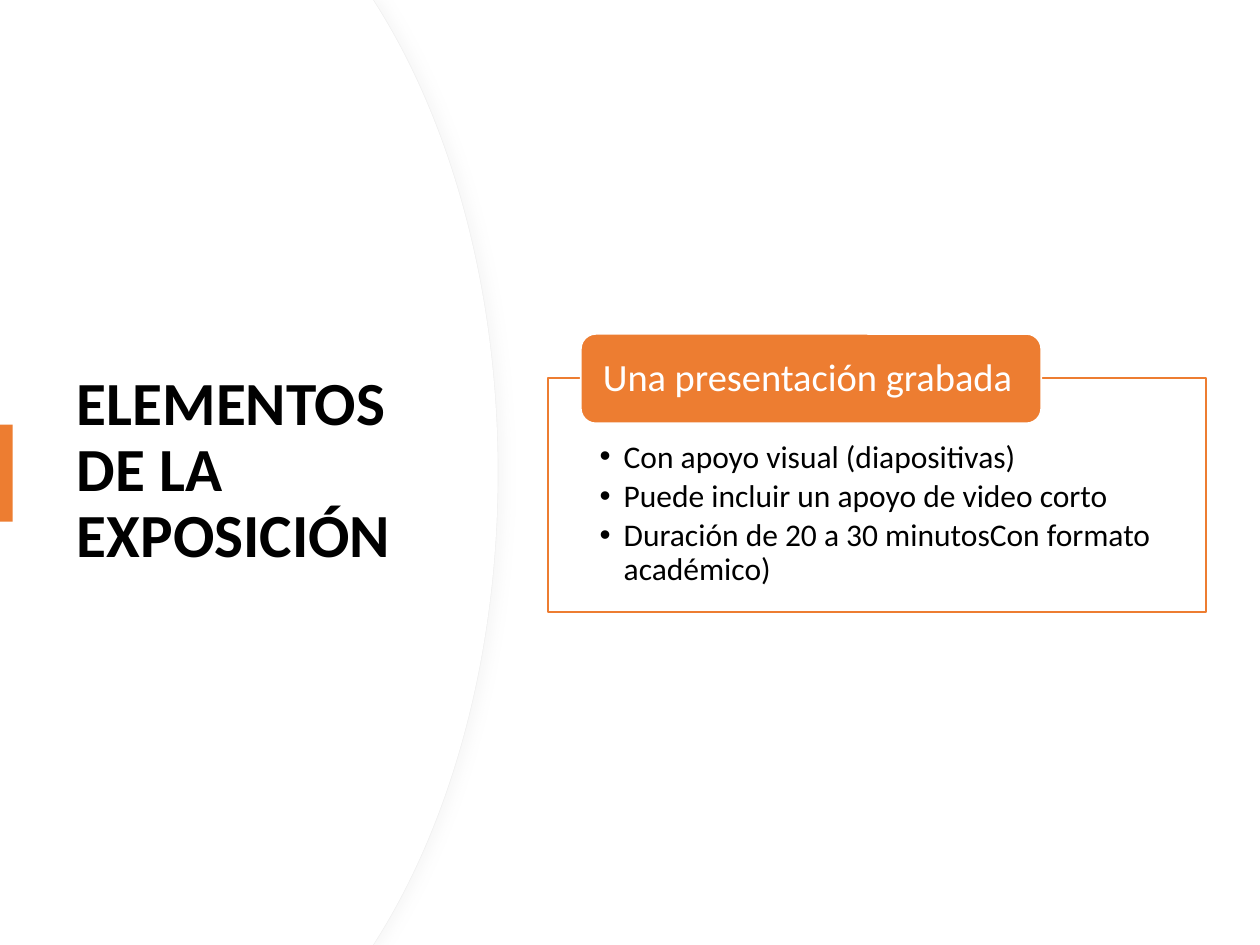
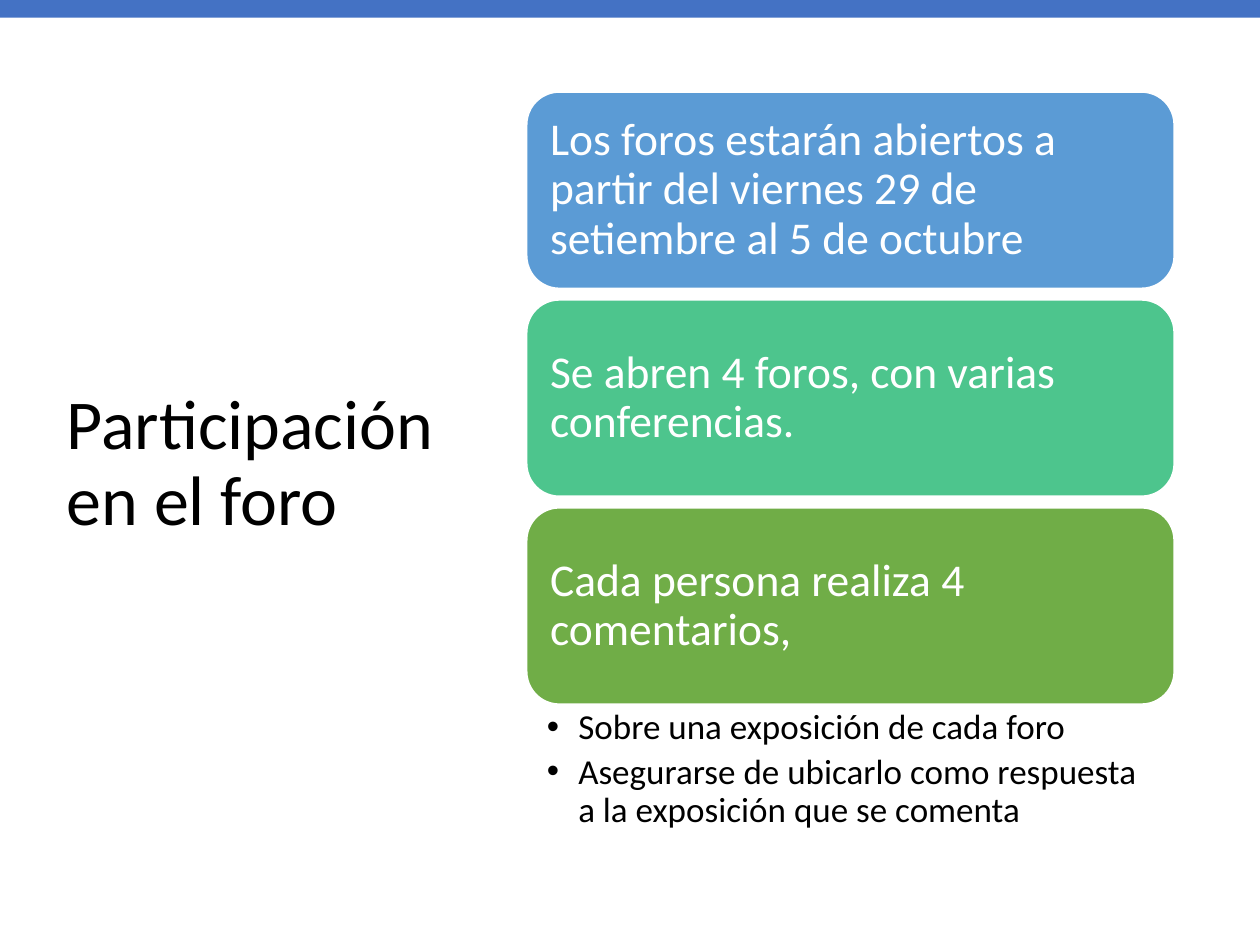
from dataclasses import dataclass

from lxml import etree
from pptx import Presentation
from pptx.dml.color import RGBColor
from pptx.enum import shapes, text
from pptx.oxml import ns
from pptx.util import Inches, Pt

RECT = shapes.MSO_SHAPE.RECTANGLE
ROUND = shapes.MSO_SHAPE.ROUNDED_RECTANGLE
TOP, MIDDLE = text.MSO_ANCHOR.TOP, text.MSO_ANCHOR.MIDDLE


@dataclass(frozen=True)
class Theme:
    font: str = "Calibri"
    black: str = "000000"
    white: str = "FFFFFF"
    edge: str = "EFEFEF"
    shade: str = "D9D9D9"
    orange: str = "ED7D31"
    blue: str = "4472C4"
    cards: tuple = ("5B9BD5", "4DC58D", "70AD47")
    strong: int = 35    # bold title
    title: int = 40
    head: int = 22
    card: int = 26
    item: int = 18
    note: int = 20


T = Theme()


def rgb(code):
    return RGBColor.from_string(code)


def paint(shape, fill, line=None, width=1):
    shape.shadow.inherit = False
    shape.fill.solid()
    shape.fill.fore_color.rgb = rgb(fill)
    if line:
        shape.line.color.rgb = rgb(line)
        shape.line.width = Pt(width)
    else:
        shape.line.fill.background()


def block(slide, kind, box, fill, line=None):
    shape = slide.shapes.add_shape(kind, *map(Inches, box))
    paint(shape, fill, line)
    return shape


def write(shape, lines, size, color, pads, anchor=MIDDLE, bold=False, after=0):
    frame = shape.text_frame
    frame.text = "\n".join(lines)
    frame.word_wrap = True
    frame.auto_size = text.MSO_AUTO_SIZE.NONE
    frame.vertical_anchor = anchor
    (frame.margin_left, frame.margin_top,
     frame.margin_right, frame.margin_bottom) = map(Inches, pads)
    for para in frame.paragraphs:
        para.alignment = text.PP_ALIGN.LEFT
        para.line_spacing = 0.9
        para.space_before = Pt(0)
        para.space_after = Pt(after)
        for run in para.runs:
            font = run.font
            font.name, font.size, font.bold = T.font, Pt(size), bold
            font.color.rgb = rgb(color)


def bullet(shape, indent):
    for para in shape.text_frame.paragraphs:
        props = para._p.get_or_add_pPr()
        props.set("marL", str(Inches(indent)))
        props.set("indent", str(-Inches(indent)))
        etree.SubElement(props, ns.qn("a:buFont")).set("typeface", "Arial")
        etree.SubElement(props, ns.qn("a:buChar")).set("char", "•")


def title(slide, box, words, size, bold=False):
    shape = slide.shapes.title
    shape.left, shape.top, shape.width, shape.height = map(Inches, box)
    write(shape, [words], size, T.black, (0.1, 0.05, 0.1, 0.05), bold=bold)


def cast(shape):
    """Soft shadow to the right of a shape."""
    effects = shape._element.spPr.find(ns.qn("a:effectLst"))
    outer = etree.SubElement(effects, ns.qn("a:outerShdw"), blurRad=str(Pt(7)),
                             dist=str(Pt(3)), dir="0", algn="l", rotWithShape="0")
    tint = etree.SubElement(outer, ns.qn("a:srgbClr"), val=T.shade)
    etree.SubElement(tint, ns.qn("a:alpha"), val="20000")


def bend(shape, starts):
    """Join three line ends from each start into one cubic curve."""
    lines = list(shape._element.spPr.iter(ns.qn("a:lnTo")))
    for start in starts:
        first, *rest = lines[start:start + 3]
        first.tag = ns.qn("a:cubicBezTo")
        for line in rest:
            first.append(line[0])
            line.getparent().remove(line)


def panel(slide):
    """White field whose right edge bulges, mirrored about its middle."""
    upper = [(2.96, 0), (3.01, 0.08), (3.59, 1.02), (3.95, 2.32)]
    lower = [(x, 7.5 - y) for x, y in reversed(upper)]
    points = [*upper, (3.95, 3.75), *lower, (0, 7.5)]
    for line in (T.edge, None):
        pen = slide.shapes.build_freeform(0, 0, scale=Inches(0.01))
        pen.add_line_segments([(x * 100, y * 100) for x, y in points])
        pen.add_line_segments([], close=True)
        shape = pen.convert_to_shape()
        bend(shape, (2, 5))
        paint(shape, T.white, line, 0.75)
        if line:
            cast(shape)


def group(slide, box, head, items):
    """Framed list with a heading tab over its top edge."""
    left, top, width, height = box
    frame = block(slide, RECT, box, T.white, T.orange)
    write(frame, items, T.item, T.black, (0.41, 0.5, 0.41, 0.14), TOP, after=3)
    bullet(frame, 0.19)
    tab = block(slide, ROUND, (left + 0.26, top - 0.35, width * 0.7, 0.71),
                T.orange, T.white)
    write(tab, [head], T.head, T.white, (0.14, 0, 0.14, 0))


def stack(slide, box, cards, notes):
    """Equal cards one below the other, then a bulleted note."""
    left, top, width, height = box
    tall, gap, under = 1.56, 0.09, 1.06
    step = tall + gap
    for i, (words, fill) in enumerate(zip(cards, T.cards)):
        card = block(slide, ROUND, (left, top + i * step, width, tall),
                     fill, T.white)
        write(card, [words], T.card, T.white, (0.11,) * 4)
    note = slide.shapes.add_textbox(
        *map(Inches, (left, top + height - under, width, under)))
    write(note, notes, T.note, T.black, (0.16, 0.04, 0.2, 0.04), TOP, after=4)
    bullet(note, 0.25)


def talk(slide):
    panel(slide)
    # Bring the title above the panel
    slide.shapes._spTree.append(slide.shapes.title._element)
    title(slide, (0.51, 1.27, 2.96, 4.95), "ELEMENTOS DE LA EXPOSICIÓN",
          T.strong, True)
    block(slide, RECT, (0, 3.37, 0.1, 0.77), T.orange)
    group(slide, (4.35, 3, 5.22, 1.86), "Una presentación grabada", [
        "Con apoyo visual (diapositivas)",
        "Puede incluir un apoyo de video corto",
        "Duración de 20 a 30 minutosCon formato académico)",
    ])


def forum(slide):
    title(slide, (0.43, 0.68, 3.12, 6.02), "Participación en el foro", T.title)
    block(slide, RECT, (0, 0, 10, 0.14), T.blue)
    stack(slide, (4.18, 0.73, 5.14, 5.92), [
        "Los foros estarán abiertos a partir del viernes 29 de setiembre "
        "al 5 de octubre",
        "Se abren 4 foros, con varias conferencias.",
        "Cada persona realiza 4 comentarios,",
    ], [
        "Sobre una exposición de cada foro",
        "Asegurarse de ubicarlo como respuesta a la exposición que se comenta",
    ])


def main():
    deck = Presentation()
    deck.slide_width, deck.slide_height = Inches(10), Inches(7.5)
    for build in (talk, forum):
        build(deck.slides.add_slide(deck.slide_layouts[5]))
    deck.save("out.pptx")


if __name__ == "__main__":
    main()
